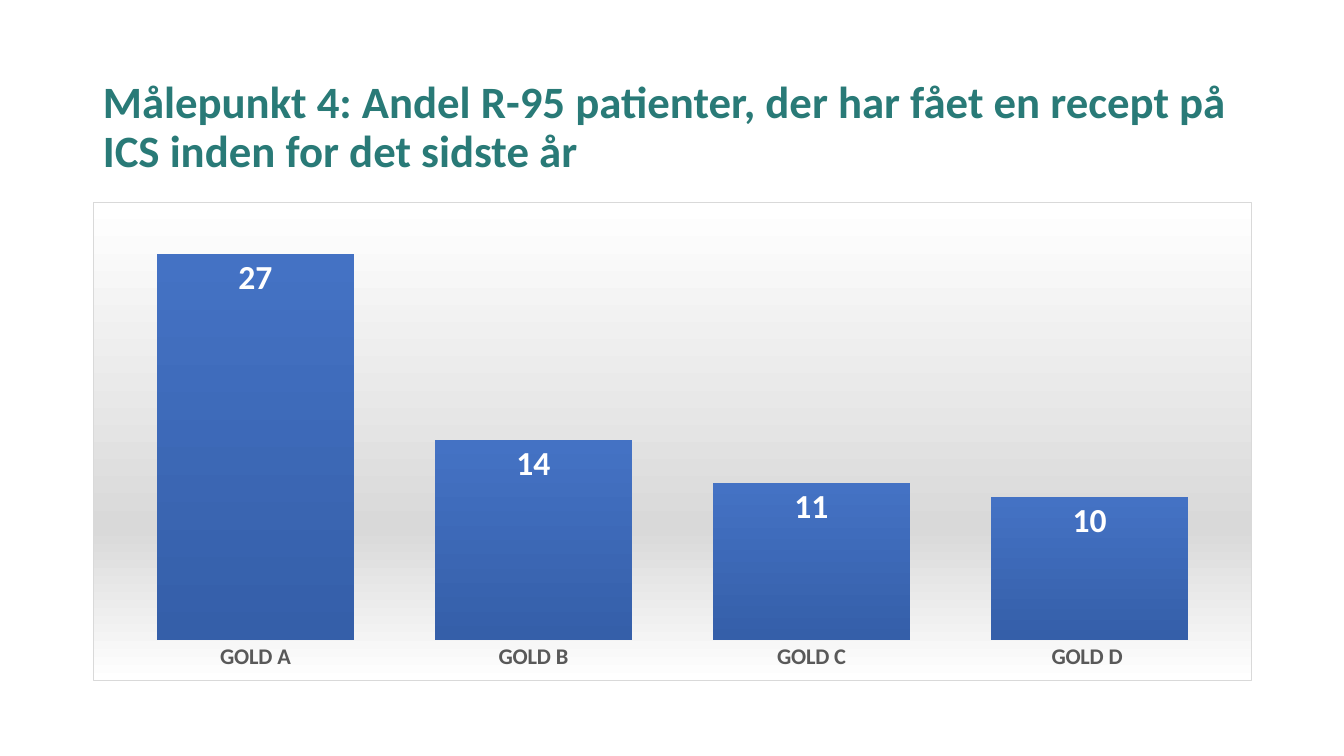
"""Build a slide with a column chart of R-95 patients by GOLD group."""
import dataclasses

import pptx
import pptx.chart.data
import pptx.dml.color
import pptx.enum.chart
import pptx.enum.text
import pptx.oxml
import pptx.oxml.ns
import pptx.util

Inches = pptx.util.Inches


@dataclasses.dataclass(frozen=True)
class Theme:
    font: str = "Calibri"
    title_color: str = "297A77"
    axis_color: str = "595959"
    label_color: str = "FFFFFF"
    border_color: str = "D9D9D9"
    border_width: float = 0.75
    panel_gradient: tuple = ((0, "FFFFFF"), (68, "D9D9D9"), (100, "FFFFFF"))
    bar_gradient: tuple = ((0, "4472C4"), (100, "355FA9"))
    title_size: int = 32
    axis_size: int = 16
    label_size: int = 24


def format_font(font, name, size, color, bold=True):
    font.name = name
    font.size = pptx.util.Pt(size)
    font.bold = bold
    font.color.rgb = pptx.dml.color.RGBColor.from_string(color)


def write_text(text_frame, text, line_spacing=1.0, **font_format):
    paragraph = text_frame.paragraphs[0]
    paragraph.line_spacing = line_spacing
    run = paragraph.add_run()
    run.text = text
    format_font(run.font, **font_format)


def gradient_xml(stops):
    stop_xml = "".join(
        f'<a:gs pos="{position * 1000}"><a:srgbClr val="{color}"/></a:gs>'
        for position, color in stops
    )
    return (
        f'<a:gradFill {pptx.oxml.ns.nsdecls("a")}><a:gsLst>{stop_xml}</a:gsLst>'
        '<a:lin ang="5400000" scaled="0"/></a:gradFill>'
    )


class SlideBuilder:
    def __init__(self, slide, theme):
        self.slide = slide
        self.theme = theme

    def add_title(self, text, left, top, width, height):
        title = self.slide.shapes.title
        title.left, title.top = Inches(left), Inches(top)
        title.width, title.height = Inches(width), Inches(height)
        frame = title.text_frame
        frame.word_wrap = True
        frame.auto_size = pptx.enum.text.MSO_AUTO_SIZE.NONE
        frame.vertical_anchor = pptx.enum.text.MSO_ANCHOR.MIDDLE
        paragraph = frame.paragraphs[0]
        paragraph.alignment = pptx.enum.text.PP_ALIGN.LEFT
        write_text(frame, text, line_spacing=0.9, name=self.theme.font,
                   size=self.theme.title_size, color=self.theme.title_color)

    def add_column_chart(self, values, left, top, width, height):
        theme = self.theme
        data = pptx.chart.data.CategoryChartData()
        data.categories = list(values)
        data.add_series("Series 1", list(values.values()))
        chart = self.slide.shapes.add_chart(
            pptx.enum.chart.XL_CHART_TYPE.COLUMN_CLUSTERED,
            Inches(left), Inches(top), Inches(width), Inches(height), data,
        ).chart
        chart.has_title = False
        chart.has_legend = False
        chart.font.name = theme.font
        chart.font.size = pptx.util.Pt(10)

        chart.value_axis.visible = False
        chart.value_axis.has_major_gridlines = False
        chart.value_axis.minimum_scale = 0
        chart.value_axis.maximum_scale = 30
        axis = chart.category_axis
        axis.major_tick_mark = pptx.enum.chart.XL_TICK_MARK.NONE
        axis.format.line.fill.background()
        format_font(axis.tick_labels.font, theme.font, theme.axis_size, theme.axis_color)

        plot = chart.plots[0]
        plot.gap_width = 41
        plot.vary_by_categories = False
        series = plot.series[0]
        series.invert_if_negative = False
        bar_properties = series.format.fill
        bar_properties.background()
        bar_fill = series._element.spPr.find(pptx.oxml.ns.qn("a:noFill"))
        bar_fill.getparent().replace(
            bar_fill, pptx.oxml.parse_xml(gradient_xml(theme.bar_gradient)))
        labels = series.data_labels
        labels.show_value = True
        labels.position = pptx.enum.chart.XL_LABEL_POSITION.INSIDE_END
        format_font(labels.font, theme.font, theme.label_size, theme.label_color)

        panel = pptx.oxml.parse_xml(
            f'<c:spPr {pptx.oxml.ns.nsdecls("c", "a")}>{gradient_xml(theme.panel_gradient)}'
            f'<a:ln w="{pptx.util.Pt(theme.border_width)}"><a:solidFill>'
            f'<a:srgbClr val="{theme.border_color}"/></a:solidFill></a:ln></c:spPr>')
        chart.element.find(pptx.oxml.ns.qn("c:chart")).addnext(panel)


def main():
    presentation = pptx.Presentation()
    presentation.slide_width = Inches(13.33)
    presentation.slide_height = Inches(7.5)
    slide = presentation.slides.add_slide(presentation.slide_layouts[5])
    builder = SlideBuilder(slide, Theme())
    builder.add_title(
        "Målepunkt 4: Andel R-95 patienter, der har fået en recept på "
        "ICS inden for det sidste år", 0.92, 0.55, 11.5, 1.45)
    builder.add_column_chart(
        {"GOLD A": 27, "GOLD B": 14, "GOLD C": 11, "GOLD D ": 10},
        0.92, 2, 11.5, 4.76)
    presentation.save("out.pptx")


if __name__ == "__main__":
    main()
